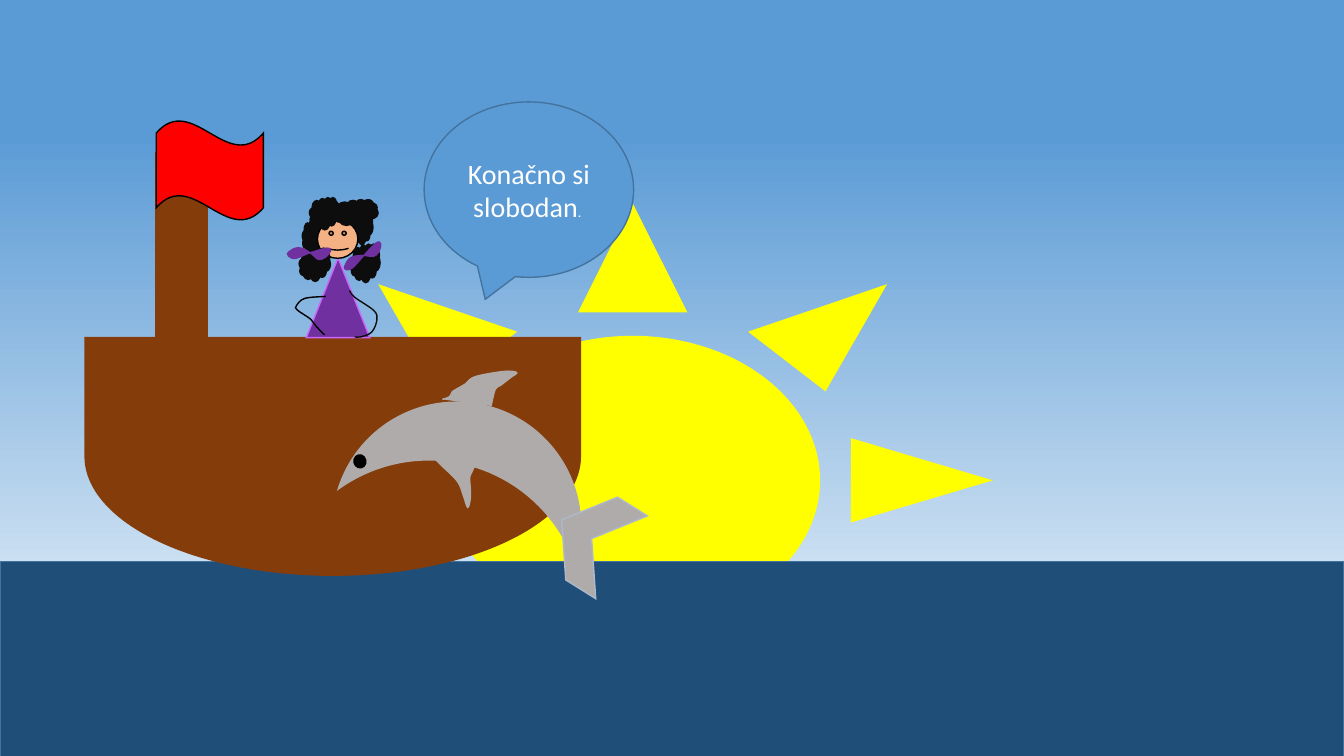
from math import cos, radians, sin

from lxml.etree import SubElement
from pptx import Presentation
from pptx.dml.color import RGBColor
from pptx.enum.shapes import MSO_SHAPE
from pptx.enum.text import MSO_ANCHOR, PP_ALIGN
from pptx.oxml.ns import qn
from pptx.util import Cm, Pt

COLORS = {
    "sky": "5B9BD5", "haze": "F7FAFD", "sun": "FFFF00", "sea": "1F4E79",
    "edge": "43739E", "wood": "843C0B", "flag": "FF0000", "black": "000000",
    "hair": "0D0D0D", "dress": "7030A0", "hem": "CC66FF", "skin": "F4B183",
    "dolphin": "AFABAB", "tail": "ADB9CA", "white": "FFFFFF",
}
HAIR_BACK = [(8.84, 5.31, 0.56, 0.86), (7.62, 5.54, 0.53, 0.86)]
HAIR_FRONT = [(8.41, 5.03, 1.12, 0.69), (8.84, 6.15, 0.74, 0.97),
              (7.8, 4.98, 0.76, 0.81), (7.54, 6.25, 0.79, 0.84)]
BOWS = [
    ((8.92, 5.94, 0.46, 1.04), 40,
     [(9.12, 6.48), (9.47, 6.12), (9.58, 6.15), (9.52, 6.35), (9.4, 6.45), (9.19, 6.43),
      (8.94, 6.45), (8.79, 6.53), (8.69, 6.73), (8.76, 6.78), (8.89, 6.73), (9.12, 6.48)]),
    ((7.54, 5.87, 0.51, 1.02), 66.8,
     [(7.77, 6.38), (8.23, 6.25), (8.33, 6.32), (8.2, 6.48), (8.03, 6.53), (7.85, 6.38),
      (7.62, 6.25), (7.44, 6.25), (7.26, 6.38), (7.34, 6.48), (7.47, 6.5), (7.77, 6.38)]),
]
ARMS = [
    ((8.81, 7.32, 0.69, 1.17), 0, "hair",
     [(8.81, 7.32), (8.94, 7.49), (9.42, 7.82), (9.5, 8.05), (9.37, 8.36),
      (9.09, 8.48), (8.94, 8.48)]),
    ((7.47, 7.47, 0.74, 0.97), 0, "black",
     [(8.18, 7.47), (7.67, 7.52), (7.47, 7.7), (7.49, 7.8), (7.82, 8.03),
      (7.95, 8.2), (8.15, 8.41)]),
]
FINS = [
    ((11.13, 9.47, 1.98, 0.81), 346.5,
     [(11.15, 10.08), (11.33, 10.01), (11.4, 9.88), (11.48, 9.83), (11.73, 9.68),
      (11.96, 9.5), (12.67, 9.37), (13, 9.4), (12.85, 9.53), (12.6, 9.73),
      (12.47, 9.83), (12.37, 10.26)]),
    ((10.77, 11.23, 1.24, 1.63), 346.5,
     [(10.59, 11.4), (10.77, 11.4), (11.15, 11.76), (11.53, 12.14), (11.68, 12.5),
      (11.79, 12.8), (11.86, 12.52), (11.84, 12.06), (11.89, 11.91), (11.96, 11.76)]),
]


def rgb(name):
    return RGBColor.from_string(COLORS[name])


def set_format(obj, values):
    for name, value in values.items():
        setattr(obj, name, value)


def paint(sp, fill, line):
    sp.shadow.inherit = False
    if fill:
        sp.fill.solid()
        sp.fill.fore_color.rgb = rgb(fill)
    else:
        sp.fill.background()
    sp.line.color.rgb = rgb(line)
    sp.line.width = Pt(1)
    SubElement(sp.element.spPr.find(qn("a:ln")), qn("a:miter"), lim="800000")


def add_figure(shapes, kind, box, fill, line=None, rotation=0, adj=None):
    sp = shapes.add_shape(kind, *[Cm(v) for v in box])
    sp.rotation = rotation
    if adj is not None:
        sp.adjustments[0] = adj
    paint(sp, fill, line or fill)
    return sp


def turn(point, box, angle):
    left, top, width, height = box
    cx, cy = left + width / 2, top + height / 2
    dx, dy = point[0] - cx, point[1] - cy
    a = radians(angle)
    return Cm(cx + dx * cos(a) - dy * sin(a)), Cm(cy + dx * sin(a) + dy * cos(a))


def bend(sp):
    segments = list(sp.element.iter(qn("a:moveTo"), qn("a:lnTo")))
    points = [[int(seg[0].get(k)) for k in "xy"] for seg in segments]
    last = len(points) - 1
    for i, seg in enumerate(segments[1:], 1):
        a, b, c, d = points[max(i - 2, 0)], points[i - 1], points[i], points[min(i + 1, last)]
        controls = ([q + (r - p) / 6 for p, q, r in zip(a, b, c)],
                    [q - (r - p) / 6 for p, q, r in zip(b, c, d)], c)
        seg.tag = qn("a:cubicBezTo")
        seg.remove(seg[0])
        for x, y in controls:
            SubElement(seg, qn("a:pt"), x=str(round(x)), y=str(round(y)))


def add_curve(shapes, box, rotation, points, fill, line, closed=False):
    outline = [turn(point, box, -rotation) for point in points]
    builder = shapes.build_freeform(*outline[0])
    builder.add_line_segments(outline[1:], close=closed)
    sp = builder.convert_to_shape()
    bend(sp)
    set_format(sp, dict(zip(("left", "top", "width", "height"), [Cm(v) for v in box])))
    sp.rotation = rotation
    paint(sp, fill, line)


def add_background(s):
    fill = s.background.fill
    fill.gradient()
    fill.gradient_angle = 270
    for stop, position, color in zip(fill.gradient_stops, (0.18, 0.97), ("sky", "haze")):
        stop.position = position
        stop.color.rgb = rgb(color)


def add_ship(shapes):
    add_figure(shapes, MSO_SHAPE.FLOWCHART_DELAY, (5.39, 5.26, 5.99, 12.48), "wood", rotation=90)
    add_figure(shapes, MSO_SHAPE.RECTANGLE, (3.93, 3.86, 1.29, 6.1), "wood")
    add_figure(shapes, MSO_SHAPE.WAVE, (3.94, 3.04, 2.7, 2.51), "flag", "black")


def add_girl(shapes):
    for box in HAIR_BACK:
        add_figure(shapes, MSO_SHAPE.CLOUD, box, "hair")
    add_figure(shapes, MSO_SHAPE.ISOSCELES_TRIANGLE, (7.72, 6.5, 1.6, 2.01), "dress", "hem")
    add_figure(shapes, MSO_SHAPE.SMILEY_FACE, (8, 5.54, 1.02, 0.97), "skin", "black", adj=0.022)
    for box in HAIR_FRONT:
        add_figure(shapes, MSO_SHAPE.CLOUD, box, "hair")
    for box, rotation, points in BOWS:
        add_curve(shapes, box, rotation, points, "dress", "dress", closed=True)
    for box, rotation, line, points in ARMS:
        add_curve(shapes, box, rotation, points, None, line)


def add_dolphin(shapes):
    add_figure(shapes, MSO_SHAPE.MOON, (10.41, 8.64, 3.12, 6.25), "dolphin", rotation=107.3)
    add_figure(shapes, MSO_SHAPE.CHEVRON, (14.02, 12.34, 1.78, 2.46), "dolphin", "tail", 212)
    for box, rotation, points in FINS:
        add_curve(shapes, box, rotation, points, "dolphin", "dolphin")
    add_figure(shapes, MSO_SHAPE.OVAL, (8.92, 11.46, 0.3, 0.33), "black", rotation=346.5)


def add_speech(shapes):
    sp = add_figure(shapes, MSO_SHAPE.OVAL_CALLOUT, (10.69, 2.57, 5.28, 4.42), "sky", "edge")
    tf = sp.text_frame
    set_format(tf, {"word_wrap": True, "vertical_anchor": MSO_ANCHOR.MIDDLE})
    p = tf.paragraphs[0]
    p.alignment = PP_ALIGN.CENTER
    for text, size in (("Konačno si slobodan", 20), (". ", 10)):
        r = p.add_run()
        r.text = text
        set_format(r.font, {"name": "Calibri", "size": Pt(size)})
        r.font.color.rgb = rgb("white")


def main():
    prs = Presentation()
    set_format(prs, {"slide_width": Cm(33.87), "slide_height": Cm(19.05)})
    s = prs.slides.add_slide(prs.slide_layouts[6])
    add_background(s)
    add_figure(s.shapes, MSO_SHAPE.SUN, (6.93, 5.16, 18.03, 13.89), "sun", adj=0.239)
    add_figure(s.shapes, MSO_SHAPE.RECTANGLE, (0, 14.15, 33.87, 4.92), "sea", "edge")
    for add_part in (add_ship, add_girl, add_dolphin):
        add_part(s.shapes.add_group_shape().shapes)
    add_speech(s.shapes)
    prs.save("out.pptx")


if __name__ == "__main__":
    main()
